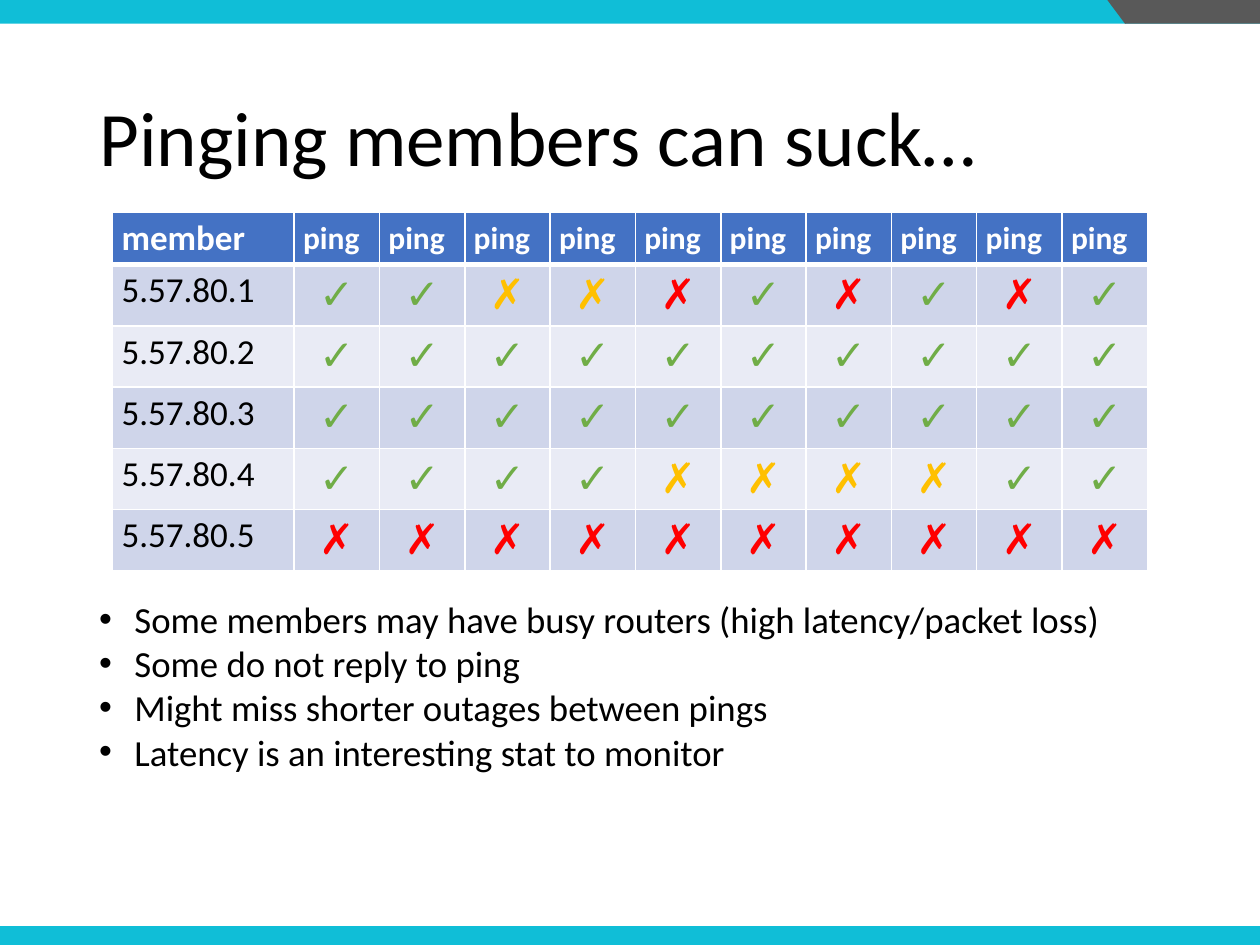
from dataclasses import dataclass

from lxml.etree import SubElement
from pptx import Presentation
from pptx.dml.color import RGBColor
from pptx.enum.shapes import MSO_SHAPE
from pptx.enum.text import MSO_ANCHOR, MSO_AUTO_SIZE, PP_ALIGN
from pptx.oxml.ns import qn
from pptx.util import Cm, Pt


@dataclass(frozen=True)
class Theme:
    font: str = "Calibri"
    text: str = "000000"
    white: str = "FFFFFF"
    bar: str = "10BED7"
    corner: str = "595959"
    header: str = "4472C4"
    bands: tuple = ("CFD5EA", "E9EBF5")
    good: str = "70AD47"
    slow: str = "FFC000"
    lost: str = "FF0000"
    title_size: int = 44
    bullet_size: int = 21
    member_size: int = 20
    ping_size: int = 18
    mark_size: int = 24


THEME = Theme()
MARKS = {"+": ("✓", THEME.good), "~": ("✗", THEME.slow), "-": ("✗", THEME.lost)}
PINGS = {
    "5.57.80.1": "++~~-+-+-+",
    "5.57.80.2": "++++++++++",
    "5.57.80.3": "++++++++++",
    "5.57.80.4": "++++~~~~++",
    "5.57.80.5": "----------",
}
BULLETS = (
    "Some members may have busy routers (high latency/packet loss)",
    "Some do not reply to ping",
    "Might miss shorter outages between pings",
    "Latency is an interesting stat to monitor",
)


def set_attributes(target, values):
    for name, value in values.items():
        setattr(target, name, value)


def write(p, text, size, color=THEME.text, bold=False):
    r = p.add_run()
    r.text = text
    set_attributes(r.font, {"name": THEME.font, "size": Pt(size), "bold": bold})
    r.font.color.rgb = RGBColor.from_string(color)


def add_block(s, kind, left, top, width, height, color, rotation=0):
    sp = s.shapes.add_shape(kind, Cm(left), Cm(top), Cm(width), Cm(height))
    sp.shadow.inherit = False
    sp.rotation = rotation
    sp.fill.solid()
    sp.fill.fore_color.rgb = RGBColor.from_string(color)
    sp.line.fill.background()


def add_bars(s):
    rect = MSO_SHAPE.RECTANGLE
    add_block(s, rect, 0, 18.67, 25.4, 0.38, THEME.bar)
    add_block(s, rect, 0, -0.03, 25.4, 0.51, THEME.bar)
    add_block(s, rect, 22.68, -0.03, 2.72, 0.51, THEME.corner)
    add_block(s, MSO_SHAPE.ISOSCELES_TRIANGLE, 22.3, -0.03, 0.76, 0.51, THEME.corner, 180)


def set_title(s, text):
    title = s.shapes.title
    set_attributes(title, {"left": Cm(1.75), "top": Cm(1.02),
                           "width": Cm(21.9), "height": Cm(3.68)})
    tf = title.text_frame
    set_attributes(tf, {"vertical_anchor": MSO_ANCHOR.MIDDLE, "word_wrap": True})
    p = tf.paragraphs[0]
    set_attributes(p, {"alignment": PP_ALIGN.LEFT, "line_spacing": 0.9})
    write(p, text, THEME.title_size)


def set_borders(cell, top=1, bottom=1):
    """Draw white borders, in points; they must precede the cell's fill."""
    tc_pr = cell._tc.get_or_add_tcPr()
    for side, width in {"L": 1, "R": 1, "T": top, "B": bottom}.items():
        line = SubElement(tc_pr, qn(f"a:ln{side}"), w=str(Pt(width)))
        fill = SubElement(line, qn("a:solidFill"))
        SubElement(fill, qn("a:srgbClr"), val=THEME.white)


def fill_cell(cell, text, size, color, fill, bold=False, align=PP_ALIGN.LEFT,
              anchor=MSO_ANCHOR.MIDDLE, top=1, bottom=1):
    set_borders(cell, top, bottom)
    cell.fill.solid()
    cell.fill.fore_color.rgb = RGBColor.from_string(fill)
    set_attributes(cell, {"margin_left": Cm(0.18), "margin_right": Cm(0.18),
                          "margin_top": Cm(0.1), "margin_bottom": Cm(0.1),
                          "vertical_anchor": anchor})
    p = cell.text_frame.paragraphs[0]
    p.alignment = align
    write(p, text, size, color, bold)


def add_ping_table(s):
    ping_count = len(PINGS["5.57.80.1"])
    widths = [3.66] + [1.72] * ping_count
    heights = [1.04] + [1.2] * len(PINGS)
    table = s.shapes.add_table(len(heights), len(widths), Cm(2.27), Cm(4.27),
                               Cm(sum(widths)), Cm(sum(heights))).table
    for column, width in zip(table.columns, widths):
        column.width = Cm(width)
    for row, height in zip(table.rows, heights):
        row.height = Cm(height)

    for col in range(len(widths)):
        text, size = ("ping", THEME.ping_size) if col else ("member", THEME.member_size)
        fill_cell(table.cell(0, col), text, size, THEME.white, THEME.header,
                  bold=True, bottom=3)
    for row, (member, results) in enumerate(PINGS.items(), 1):
        band = THEME.bands[(row - 1) % 2]
        top = 3 if row == 1 else 1
        fill_cell(table.cell(row, 0), member, THEME.member_size, THEME.text, band,
                  anchor=MSO_ANCHOR.TOP, top=top)
        for col, result in enumerate(results, 1):
            mark, color = MARKS[result]
            fill_cell(table.cell(row, col), mark, THEME.mark_size, color, band,
                      align=PP_ALIGN.CENTER, top=top)


def add_bullets(s, items):
    box = s.shapes.add_textbox(Cm(1.75), Cm(11.91), Cm(20.88), Cm(3.84))
    tf = box.text_frame
    set_attributes(tf, {"word_wrap": False, "auto_size": MSO_AUTO_SIZE.SHAPE_TO_FIT_TEXT})
    for i, item in enumerate(items):
        p = tf.add_paragraph() if i else tf.paragraphs[0]
        p_pr = p._p.get_or_add_pPr()
        p_pr.set("marL", str(Cm(0.71)))
        p_pr.set("indent", str(-Cm(0.71)))
        SubElement(p_pr, qn("a:buFont"), typeface="Arial")
        SubElement(p_pr, qn("a:buChar"), char="•")
        write(p, item, THEME.bullet_size)


def main():
    prs = Presentation()
    set_attributes(prs, {"slide_width": Cm(25.4), "slide_height": Cm(19.05)})
    s = prs.slides.add_slide(prs.slide_layouts[5])
    add_bars(s)
    set_title(s, "Pinging members can suck…")
    add_ping_table(s)
    add_bullets(s, BULLETS)
    prs.save("out.pptx")


if __name__ == "__main__":
    main()
